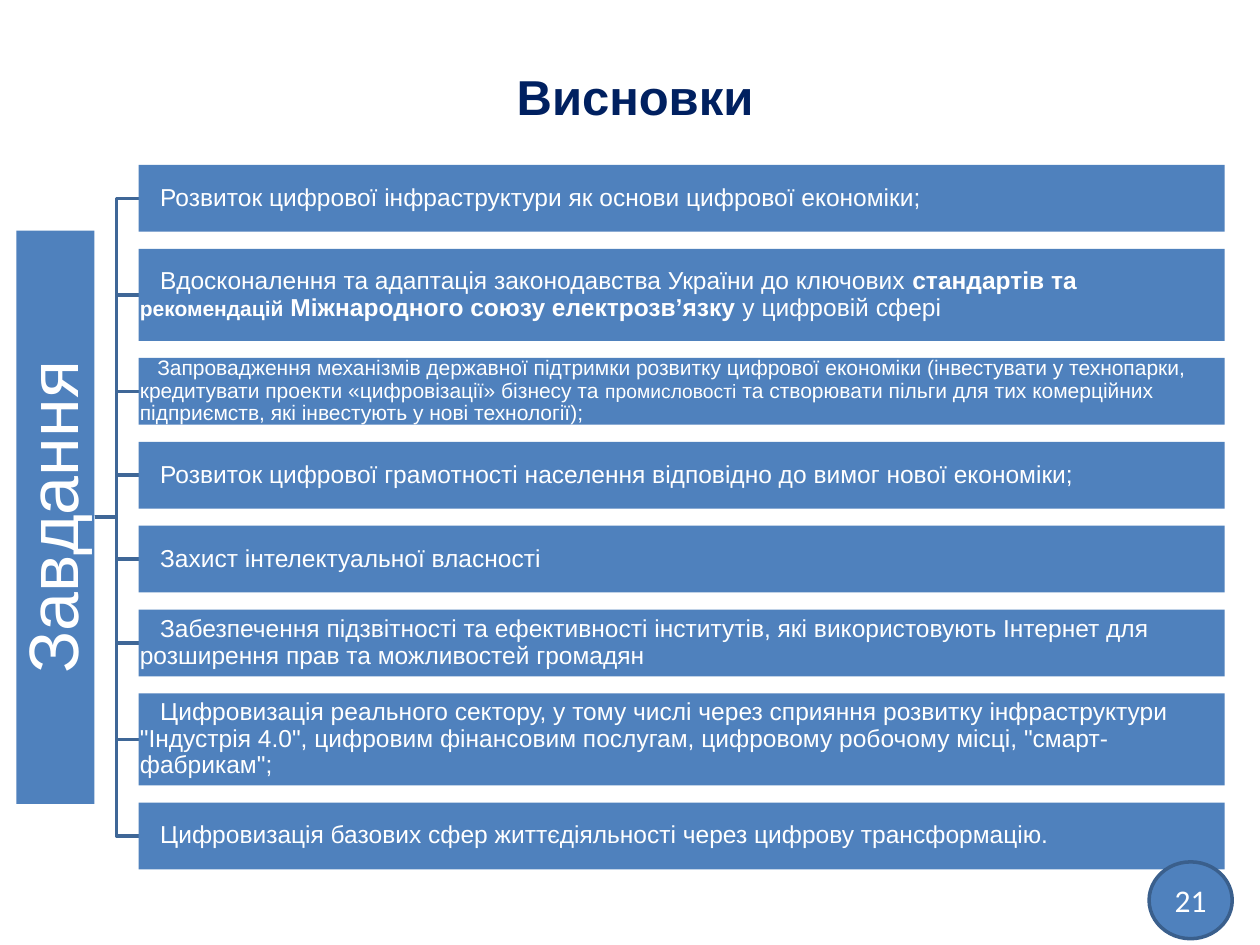
from dataclasses import dataclass

from pptx import Presentation
from pptx.dml.color import RGBColor
from pptx.enum.shapes import MSO_CONNECTOR, MSO_SHAPE
from pptx.enum.text import MSO_ANCHOR, PP_ALIGN
from pptx.oxml.ns import qn
from pptx.util import Inches, Pt


@dataclass(frozen=True)
class Theme:
    fill: RGBColor = RGBColor(0x4F, 0x81, 0xBD)
    branch: RGBColor = RGBColor(0x3F, 0x67, 0x97)
    badge_line: RGBColor = RGBColor(0x3A, 0x5F, 0x8C)
    title: RGBColor = RGBColor(0x00, 0x20, 0x60)
    white: RGBColor = RGBColor(0xFF, 0xFF, 0xFF)
    font: str = "Arial"
    badge_font: str = "Calibri"
    title_size: int = 28
    spine_size: int = 40
    badge_size: int = 18
    task_size: int = 14
    small_size: int = 12
    tiny_size: int = 11
    line_width: int = 2


THEME = Theme()
BAR, TALL_BAR = 0.53, 0.73

# Each task: bar height, base size, runs of (text, bold, size or None for base)
TASKS = [
    (BAR, THEME.task_size, [
        ("Розвиток цифрової інфраструктури як основи цифрової економіки;", False, None)]),
    (TALL_BAR, THEME.task_size, [
        ("Вдосконалення та адаптація законодавства України до ключових ", False, None),
        ("стандартів та ", True, None),
        ("рекомендацій", True, THEME.small_size),
        (" Міжнародного союзу електрозв’язку", True, None),
        (" у цифровій сфері", False, None)]),
    (BAR, THEME.small_size, [
        ("Запровадження механізмів державної підтримки розвитку цифрової економіки "
         "(інвестувати у технопарки, кредитувати проекти «цифровізації» бізнесу та ", False, None),
        ("промисловості", False, THEME.tiny_size),
        (" та створювати пільги для тих комерційних підприємств, "
         "які інвестують у нові технології);", False, None)]),
    (BAR, THEME.task_size, [
        ("Розвиток цифрової грамотності населення відповідно до вимог нової економіки;",
         False, None)]),
    (BAR, THEME.task_size, [("Захист інтелектуальної власності", False, None)]),
    (BAR, THEME.task_size, [
        ("Забезпечення підзвітності та ефективності інститутів, які використовують "
         "Інтернет для розширення прав та можливостей громадян", False, None)]),
    (TALL_BAR, THEME.task_size, [
        ("Цифровизація реального сектору, у тому числі через сприяння розвитку "
         "інфраструктури \"Індустрія 4.0\", цифровим фінансовим послугам, цифровому "
         "робочому місці, \"смарт-фабрикам\";", False, None)]),
    (BAR, THEME.task_size, [
        ("Цифровизація базових сфер життєдіяльності через цифрову трансформацію.",
         False, None)]),
]


def style_paragraph(paragraph, size, color, font=THEME.font, align=PP_ALIGN.LEFT):
    paragraph.alignment = align
    paragraph.font.name = font
    paragraph.font.size = Pt(size)
    paragraph.font.color.rgb = color


def add_block(slide, preset, left, top, width, height, inset):
    block = slide.shapes.add_shape(
        preset, Inches(left), Inches(top), Inches(width), Inches(height))
    block.shadow.inherit = False
    block.fill.solid()
    block.fill.fore_color.rgb = THEME.fill
    block.line.fill.background()
    frame = block.text_frame
    frame.word_wrap = True
    frame.vertical_anchor = MSO_ANCHOR.MIDDLE
    frame.margin_left = frame.margin_right = Inches(inset)
    frame.margin_top = frame.margin_bottom = Inches(inset)
    return block


def add_title(slide, left, top, width, height):
    title = slide.shapes.add_textbox(
        Inches(left), Inches(top), Inches(width), Inches(height))
    title.text_frame.word_wrap = True
    paragraph = title.text_frame.paragraphs[0]
    paragraph.text = "Висновки"
    style_paragraph(paragraph, THEME.title_size, THEME.title, align=PP_ALIGN.CENTER)
    paragraph.font.bold = True


def add_branch(slide, start_x, start_y, end_x, end_y):
    branch = slide.shapes.add_connector(
        MSO_CONNECTOR.ELBOW, Inches(start_x), Inches(start_y), Inches(end_x), Inches(end_y))
    branch.line.color.rgb = THEME.branch
    branch.line.width = Pt(THEME.line_width)
    properties = branch._element.spPr
    properties.append(properties.makeelement(qn("a:effectLst"), {}))


def add_spine(slide, left, top, width, height):
    # A horizontal bar turned about its centre to stand upright
    spine = add_block(slide, MSO_SHAPE.RECTANGLE, left + (width - height) / 2,
                      top + (height - width) / 2, height, width, 0.03)
    spine.rotation = 270
    paragraph = spine.text_frame.paragraphs[0]
    paragraph.text = "Завдання"
    paragraph.line_spacing = 0.9
    style_paragraph(paragraph, THEME.spine_size, THEME.white, align=PP_ALIGN.CENTER)


def add_task(slide, left, top, width, height, base_size, runs):
    task = add_block(slide, MSO_SHAPE.RECTANGLE, left, top, width, height, 0.01)
    paragraph = task.text_frame.paragraphs[0]
    paragraph.line_spacing = 0.9
    style_paragraph(paragraph, base_size, THEME.white)
    # First-line indent in proportion to the type size
    properties = paragraph._p.get_or_add_pPr()
    properties.set("marL", "0")
    properties.set("indent", str(Pt(base_size * 0.83)))
    for text, bold, size in runs:
        run = paragraph.add_run()
        run.text = text
        if bold:
            run.font.bold = True
        if size:
            run.font.size = Pt(size)


def add_task_tree(slide, left, top, width, height):
    spine_width, spine_height, branch_width = 0.62, 4.55, 0.35
    task_left = left + spine_width + branch_width
    middle = top + height / 2
    gap = (height - sum(task[0] for task in TASKS)) / (len(TASKS) - 1)
    tops = [top + sum(task[0] for task in TASKS[:i]) + i * gap for i in range(len(TASKS))]

    for task_top, (task_height, _, _) in zip(tops, TASKS):
        add_branch(slide, left + spine_width, middle, task_left, task_top + task_height / 2)
    add_spine(slide, left, middle - spine_height / 2, spine_width, spine_height)
    for task_top, (task_height, size, runs) in zip(tops, TASKS):
        add_task(slide, task_left, task_top, left + width - task_left, task_height, size, runs)


def add_page_badge(slide, left, top, width, height):
    badge = add_block(slide, MSO_SHAPE.OVAL, left, top, width, height, 0.05)
    badge.line.color.rgb = THEME.badge_line
    badge.line.width = Pt(THEME.line_width)
    paragraph = badge.text_frame.paragraphs[0]
    paragraph.text = "21"
    style_paragraph(paragraph, THEME.badge_size, THEME.white, THEME.badge_font, PP_ALIGN.CENTER)


def main():
    presentation = Presentation()
    presentation.slide_width, presentation.slide_height = Inches(10), Inches(7.5)
    slide = presentation.slides.add_slide(presentation.slide_layouts[6])
    add_task_tree(slide, 0.13, 1.31, 9.59, 5.59)
    add_title(slide, 2.4, 0.48, 5.28, 0.57)
    add_page_badge(slide, 9.12, 6.84, 0.66, 0.61)
    presentation.save("out.pptx")


if __name__ == "__main__":
    main()
